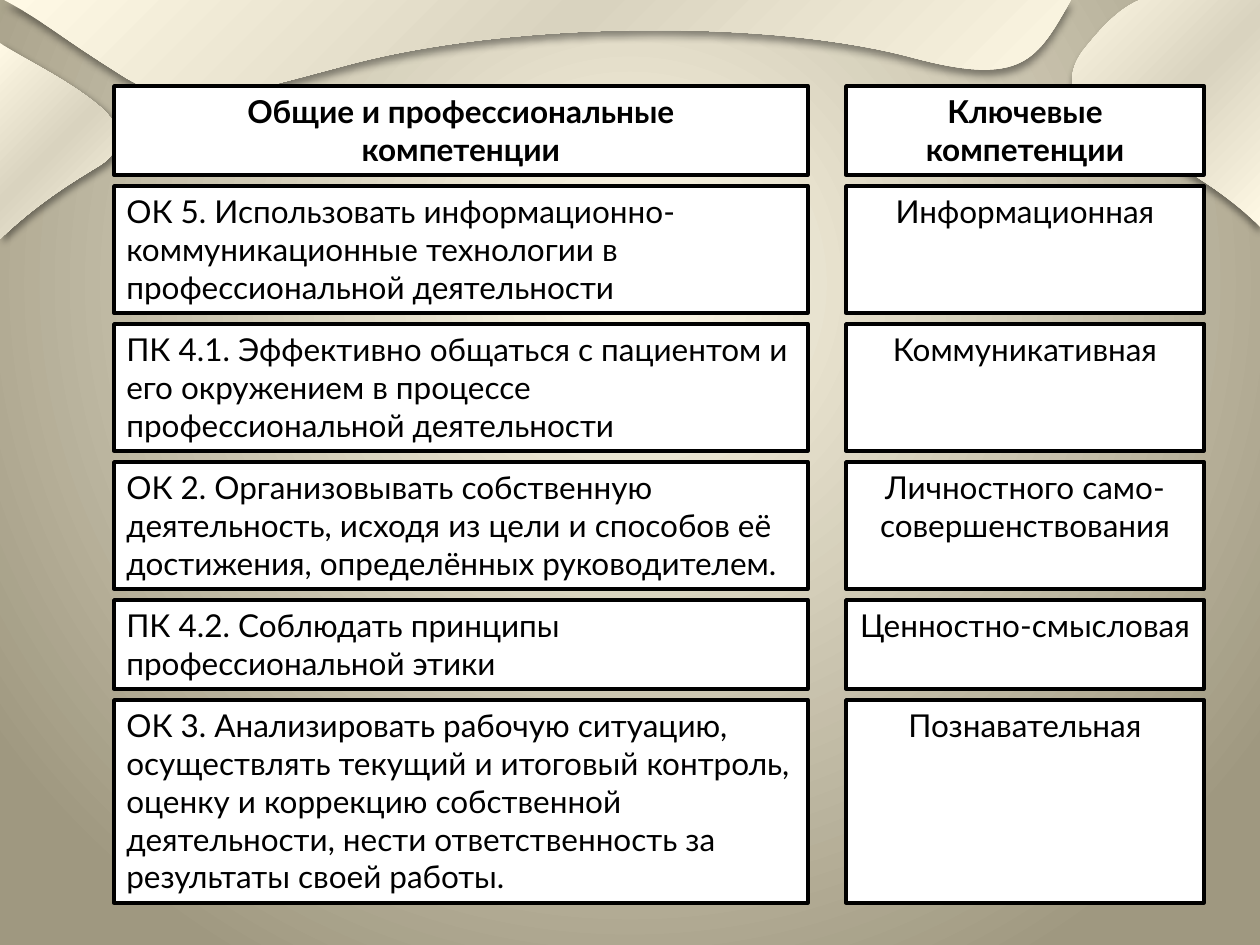
from lxml import etree
from pptx import Presentation
from pptx.dml.color import RGBColor
from pptx.enum.shapes import MSO_SHAPE
from pptx.enum.text import MSO_ANCHOR, MSO_AUTO_SIZE, PP_ALIGN
from pptx.oxml.ns import qn
from pptx.util import Pt

RECTANGLE = MSO_SHAPE.RECTANGLE
TOP = MSO_ANCHOR.TOP
GROW, FIXED = MSO_AUTO_SIZE.SHAPE_TO_FIT_TEXT, MSO_AUTO_SIZE.NONE
LEFT, CENTER = PP_ALIGN.LEFT, PP_ALIGN.CENTER

EMU_PER_PX = 914400 / 126
FONT = "Lato"
BLACK, WHITE = "000000", "FFFFFF"
BACKGROUND_STOPS = [(0, "FFFAE8"), (100, "9F9880")]
RIBBON_STOPS = [(0, "FFF9E5"), (50, "D9D3BF"), (100, "FFF9E5")]

# Ribbons: start point, segments (one point = line, three = curve), shadow angle
RIBBONS = [
    ((4, 0), [[(47, 23), (54, 33), (126, 78)],
              [(184, 112), (227, 97), (340, 67)],
              [(504, 21), (767, 18), (914, 58)],
              [(1023, 87), (1037, 60), (1071, 0)],
              [(4, 0)]], 90),
    ((0, 43), [[(0, 239)],
               [(43, 198), (83, 176), (102, 164)],
               [(122, 150), (125, 126), (98, 105)],
               [(67, 79), (20, 57), (0, 43)]], 45),
    ((1140, 0), [[(1261, 0)],
                 [(1261, 74), (1260, 152), (1260, 227)],
                 [(1208, 173), (1125, 140), (1097, 118)],
                 [(1062, 93), (1071, 68), (1082, 52)],
                 [(1094, 37), (1115, 10), (1140, 0)]], 90),
]

# Box columns and rows
GENERAL_X, GENERAL_WIDTH = 114, 694
KEY_X, KEY_WIDTH = 846, 358
FIRST_TOP, ROW_GAP = 86, 11
LINE_HEIGHT, ROW_PADDING = 38, 13

HEADINGS = ("Общие и профессиональные\nкомпетенции", "Ключевые\nкомпетенции")
ROWS = [  # lines of text, general competence, key competence
    (3, "ОК 5. Использовать информационно-коммуникационные технологии "
        "в профессиональной деятельности", "Информационная"),
    (3, "ПК 4.1. Эффективно общаться с пациентом и его окружением "
        "в процессе профессиональной деятельности", "Коммуникативная"),
    (3, "ОК 2. Организовывать собственную деятельность, исходя из цели "
        "и способов её достижения, определённых руководителем.",
     "Личностного само-совершенствования"),
    (2, "ПК 4.2. Соблюдать принципы профессиональной этики",
     "Ценностно-смысловая"),
    (5, "ОК 3. Анализировать рабочую ситуацию, осуществлять текущий и "
        "итоговый контроль, оценку и коррекцию собственной деятельности, "
        "нести ответственность за результаты своей работы.",
     "Познавательная"),
]


def px(length):
    return round(length * EMU_PER_PX)


def color(value):
    return RGBColor.from_string(value)


def add_node(parent, tag, **attributes):
    values = {name: str(value) for name, value in attributes.items()}
    return etree.SubElement(parent, qn(tag), values)


def set_gradient(fill, element, stops, angle=None, focus=None):
    """Give a linear gradient at an angle, or a circular one around a focus."""
    fill.gradient()
    gradient = element.find(".//" + qn("a:gradFill"))
    for child in list(gradient):
        gradient.remove(child)
    stop_list = add_node(gradient, "a:gsLst")
    for position, value in stops:
        stop = add_node(stop_list, "a:gs", pos=position * 1000)
        add_node(stop, "a:srgbClr", val=value)
    if focus is None:
        add_node(gradient, "a:lin", ang=angle * 60000, scaled=0)
    else:
        circle = add_node(gradient, "a:path", path="circle")
        sides = {side: part * 1000 for side, part in zip("ltrb", focus)}
        add_node(circle, "a:fillToRect", **sides)


def add_shadow(shape, angle):
    shape.shadow.inherit = False
    effects = shape.element.find(".//" + qn("a:effectLst"))
    shadow = add_node(effects, "a:outerShdw", blurRad=Pt(4), dist=Pt(3),
                      dir=angle * 60000, algn="tl", rotWithShape=0)
    tint = add_node(shadow, "a:srgbClr", val=BLACK)
    add_node(tint, "a:alpha", val=40000)


def bend_segments(shape, segments):
    """Join the lines of each three-point segment into one cubic curve."""
    lines = iter(list(shape.element.iter(qn("a:lnTo"))))
    for segment in segments:
        first, *others = [next(lines) for _ in segment]
        if others:
            first.tag = qn("a:cubicBezTo")
            for line in others:
                first.append(line[0])
                line.getparent().remove(line)


def add_ribbon(slide, start, segments, shadow_angle):
    points = [(px(x), px(y)) for segment in segments for x, y in segment]
    builder = slide.shapes.build_freeform(px(start[0]), px(start[1]))
    builder.add_line_segments(points, close=True)
    ribbon = builder.convert_to_shape()
    bend_segments(ribbon, segments)
    set_gradient(ribbon.fill, ribbon.element, RIBBON_STOPS, angle=45)
    ribbon.line.fill.background()
    add_shadow(ribbon, shadow_angle)


def write_text(frame, text, size=18, bold=False, align=LEFT, fit=GROW, wrap=True):
    frame.word_wrap = wrap
    frame.auto_size = fit
    frame.vertical_anchor = TOP
    for index, line in enumerate(text.split("\n")):
        para = frame.paragraphs[0] if index == 0 else frame.add_paragraph()
        para.alignment = align
        span = para.add_run()
        span.text = line
        span.font.name = FONT
        span.font.size = Pt(size)
        span.font.bold = bold
        span.font.color.rgb = color(BLACK)


def add_box(slide, left, top, width, height, text, **text_format):
    box = slide.shapes.add_shape(RECTANGLE, px(left), px(top), px(width), px(height))
    box.shadow.inherit = False
    box.fill.solid()
    box.fill.fore_color.rgb = color(WHITE)
    box.line.color.rgb = color(BLACK)
    box.line.width = Pt(2)
    write_text(box.text_frame, text, **text_format)


def add_row(slide, top, height, general, key, general_format, key_format):
    add_box(slide, GENERAL_X, top, GENERAL_WIDTH, height, general, **general_format)
    add_box(slide, KEY_X, top, KEY_WIDTH, height, key, **key_format)


def main():
    deck = Presentation()
    deck.slide_width, deck.slide_height = px(1260), px(945)
    slide = deck.slides.add_slide(deck.slide_layouts[6])

    # Background and ribbons
    set_gradient(slide.background.fill, slide.element, BACKGROUND_STOPS,
                 focus=(50, 30, 50, 70))
    for start, segments, shadow_angle in RIBBONS:
        add_ribbon(slide, start, segments, shadow_angle)

    # Headings
    heading = {"bold": True, "align": CENTER}
    height = 2 * LINE_HEIGHT + ROW_PADDING
    add_row(slide, FIRST_TOP, height, *HEADINGS, heading, heading)

    # Competence pairs
    top = FIRST_TOP + height + ROW_GAP
    for lines, general, key in ROWS:
        height = lines * LINE_HEIGHT + ROW_PADDING
        key_format = {"align": CENTER, "fit": FIXED, "wrap": " " in key}
        add_row(slide, top, height, general, key, {}, key_format)
        top += height + ROW_GAP

    deck.save("out.pptx")


if __name__ == "__main__":
    main()
